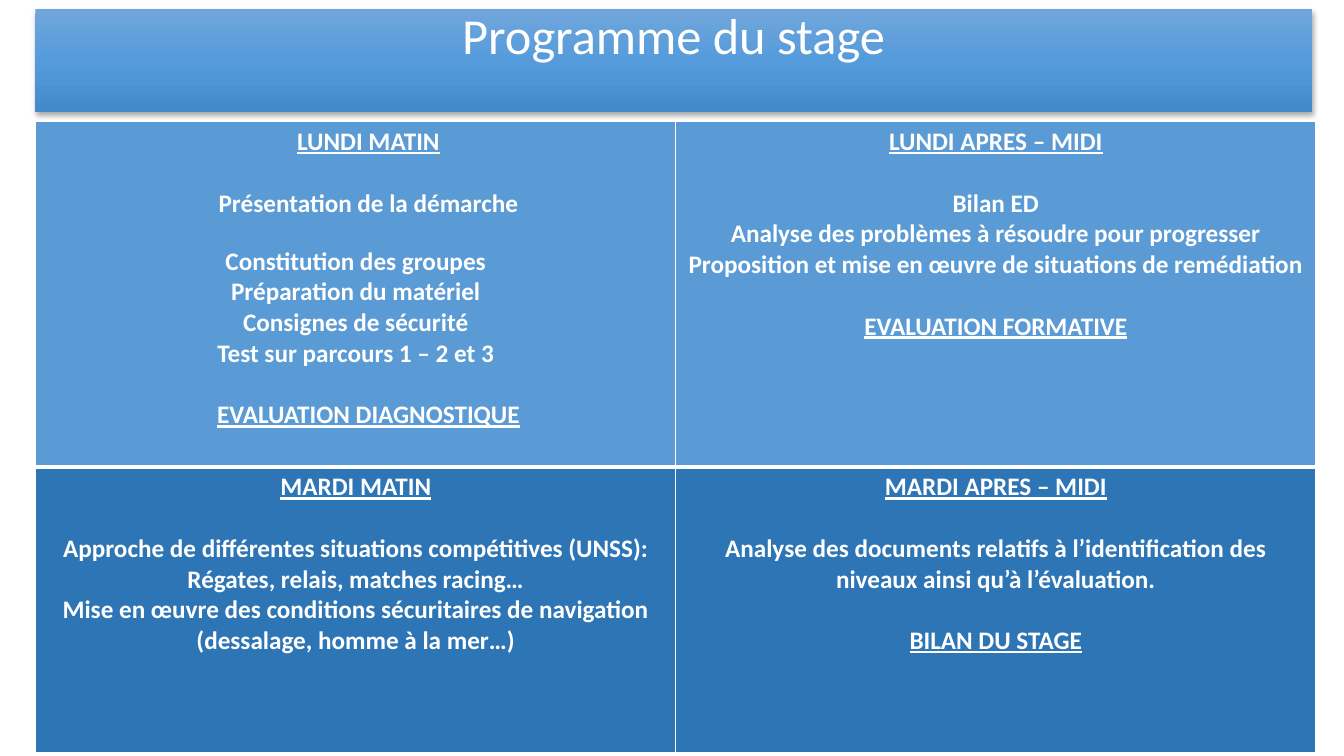
from copy import deepcopy
from dataclasses import dataclass

from lxml import etree
from pptx import Presentation
from pptx import util as u
from pptx.dml import color
from pptx.enum import shapes, text
from pptx.oxml import ns


@dataclass(frozen=True)
class Theme:
    font: str = "Calibri"
    white: str = "FFFFFF"
    shadow: str = "000000"
    rows: tuple = ("5B9BD5", "2E75B6")
    gradient: tuple = ("71A6DB", "559BDB", "448ACA")
    title: int = 36
    body: int = 18
    gap: float = 22
    small_gap: float = 19.5
    line: float = 1
    divider: float = 3


THEME = Theme()
INDENT = u.Cm(0.64)
HEADING = dict(underline=True, after=THEME.gap)
CLOSING = dict(underline=True, before=THEME.gap)

PROGRAMME = [
    [
        [
            ("LUNDI MATIN", dict(HEADING, indent=INDENT)),
            ("Présentation de la démarche", dict(indent=INDENT, after=THEME.small_gap)),
            ("Constitution des groupes", {}),
            ("Préparation du matériel", {}),
            ("Consignes de sécurité", {}),
            ("Test sur parcours 1 – 2 et 3", {}),
            ("EVALUATION DIAGNOSTIQUE", dict(CLOSING, indent=INDENT)),
        ],
        [
            ("LUNDI APRES – MIDI", HEADING),
            ("Bilan ED", {}),
            ("Analyse des problèmes à résoudre pour progresser", {}),
            ("Proposition et mise en œuvre de situations de remédiation", {}),
            ("EVALUATION FORMATIVE", CLOSING),
        ],
    ],
    [
        [
            ("MARDI MATIN", HEADING),
            ("Approche de différentes situations compétitives (UNSS): "
             "Régates, relais, matches racing…", {}),
            ("Mise en œuvre des conditions sécuritaires de navigation "
             "(dessalage, homme à la mer…)", {}),
        ],
        [
            ("MARDI APRES – MIDI", HEADING),
            ("Analyse des documents relatifs à l’identification des niveaux "
             "ainsi qu’à l’évaluation.", {}),
            ("BILAN DU STAGE", CLOSING),
        ],
    ],
]


def rgb(value):
    return color.RGBColor.from_string(value)


def child(parent, tag, **attrs):
    values = {name: str(value) for name, value in attrs.items()}
    return etree.SubElement(parent, ns.qn(tag), values)


def write(p, content, size=THEME.body, bold=True, underline=False,
          before=0, after=0, spacing=1.0, indent=0):
    p.alignment = text.PP_ALIGN.CENTER
    p.line_spacing = spacing
    p.space_before = u.Pt(before)
    p.space_after = u.Pt(after)
    if indent:
        p._p.get_or_add_pPr().set("marL", str(int(indent)))
    r = p.add_run()
    r.text = content
    r.font.name = THEME.font
    r.font.size = u.Pt(size)
    r.font.bold = bold
    r.font.underline = underline
    r.font.color.rgb = rgb(THEME.white)


def fill_gradient(sp, colours):
    sp.fill.gradient()
    sp.fill.gradient_angle = 270
    stops = sp._element.spPr.find(ns.qn("a:gradFill")).find(ns.qn("a:gsLst"))
    stops.insert(1, deepcopy(stops[0]))
    for i, (stop, value) in enumerate(zip(sp.fill.gradient_stops, colours)):
        stop.position = i / (len(colours) - 1)
        stop.color.rgb = rgb(value)


def add_shadow(sp):
    sp.shadow.inherit = False
    effects = sp._element.spPr.find(ns.qn("a:effectLst"))
    outer = child(effects, "a:outerShdw", blurRad=u.Pt(3.5), dist=u.Pt(2.2),
                  dir=5400000, rotWithShape=0)
    tone = child(outer, "a:srgbClr", val=THEME.shadow)
    child(tone, "a:alpha", val=32000)


def add_banner(s, content):
    sp = s.shapes.add_shape(shapes.MSO_SHAPE.RECTANGLE, u.Cm(0.89), u.Cm(0.23),
                            u.Cm(32.18), u.Cm(2.59))
    fill_gradient(sp, THEME.gradient)
    sp.line.fill.background()
    add_shadow(sp)
    tf = sp.text_frame
    tf.word_wrap = True
    tf.vertical_anchor = text.MSO_ANCHOR.TOP
    tf.margin_top = u.Cm(0.05)
    write(tf.paragraphs[0], content, size=THEME.title, bold=False, spacing=0.9)


def set_borders(cell, **widths):
    tcPr = cell._tc.get_or_add_tcPr()
    for i, side in enumerate(("L", "R", "T", "B")):
        line = child(tcPr, f"a:ln{side}", w=u.Pt(widths.get(side, THEME.line)))
        child(child(line, "a:solidFill"), "a:srgbClr", val=THEME.white)
        tcPr.insert(i, line)


def fill_cell(cell, entries, fill):
    cell.fill.solid()
    cell.fill.fore_color.rgb = rgb(fill)
    tf = cell.text_frame
    for i, (content, style) in enumerate(entries):
        p = tf.add_paragraph() if i else tf.paragraphs[0]
        write(p, content, **style)


def add_programme(s, programme):
    widths = [u.Cm(16.13)] * 2
    heights = [u.Cm(8.7), u.Cm(7.2)]
    table = s.shapes.add_table(len(heights), len(widths), u.Cm(0.9), u.Cm(3.06),
                               sum(widths), sum(heights)).table
    table.first_row = False
    table.horz_banding = False
    for column, width in zip(table.columns, widths):
        column.width = width
    for i, (row, height) in enumerate(zip(table.rows, heights)):
        row.height = height
        for cell, entries in zip(row.cells, programme[i]):
            fill_cell(cell, entries, THEME.rows[i])
            set_borders(cell, **{"T" if i else "B": THEME.divider})


def main():
    prs = Presentation()
    prs.slide_width = u.Cm(33.87)
    prs.slide_height = u.Cm(19.05)
    s = prs.slides.add_slide(prs.slide_layouts[6])
    add_banner(s, "Programme du stage")
    add_programme(s, PROGRAMME)
    prs.save("out.pptx")


if __name__ == "__main__":
    main()
